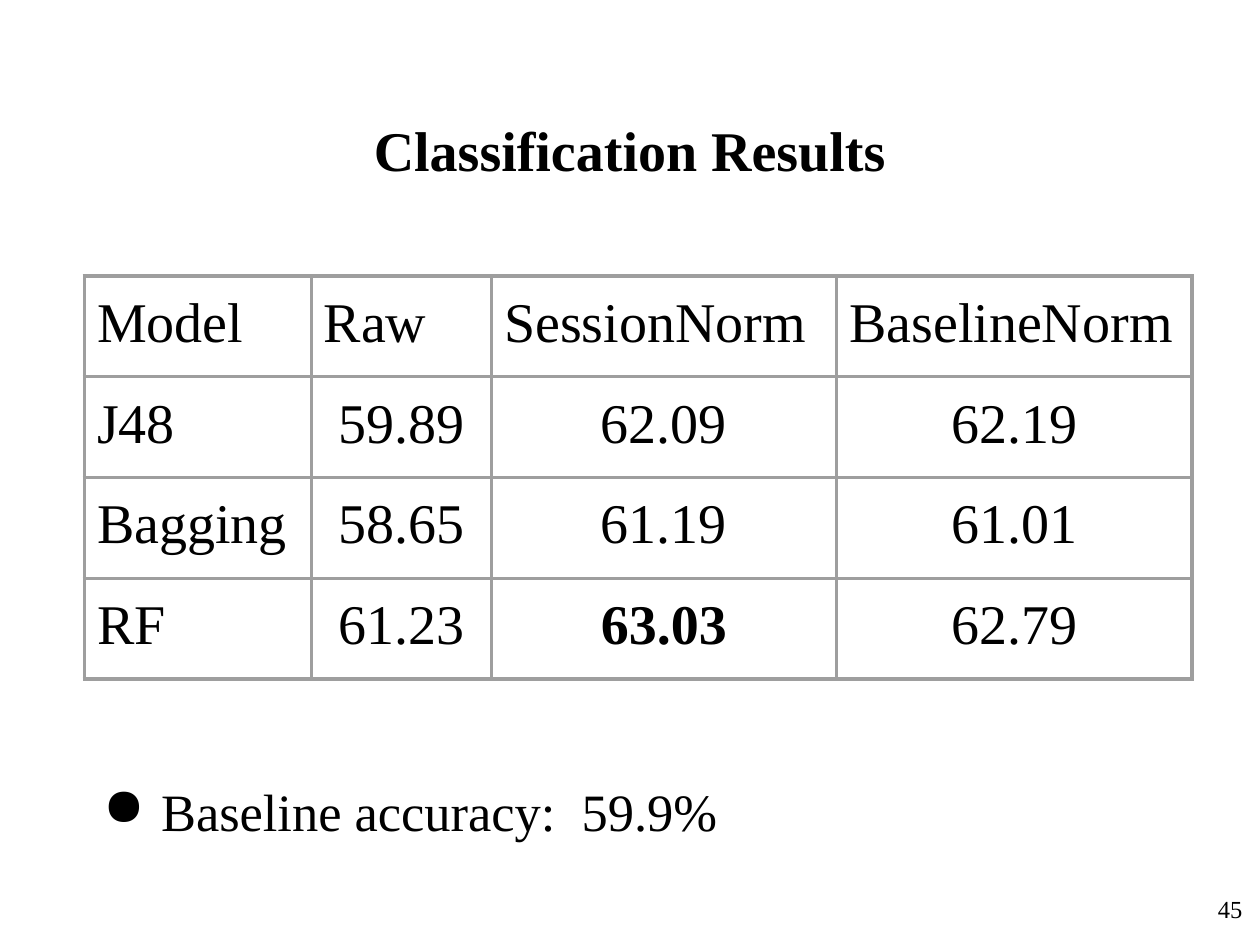
"""Build the classification results slide with its table and baseline note."""

from dataclasses import dataclass

from lxml import etree
from pptx import Presentation
from pptx.dml.color import RGBColor
from pptx.enum.text import MSO_ANCHOR, MSO_AUTO_SIZE, PP_ALIGN
from pptx.oxml.ns import qn
from pptx.util import Inches, Pt

LEFT, CENTER, RIGHT = PP_ALIGN.LEFT, PP_ALIGN.CENTER, PP_ALIGN.RIGHT
TOP, MIDDLE, BOTTOM = MSO_ANCHOR.TOP, MSO_ANCHOR.MIDDLE, MSO_ANCHOR.BOTTOM
NO_AUTOFIT = MSO_AUTO_SIZE.NONE

FONT_NAME = "Times New Roman"
TEXT_COLOR = "000000"
BORDER_COLOR = "9E9E9E"
BORDER_WIDTH = Pt(2.25)
BORDER_TAGS = ("a:lnL", "a:lnR", "a:lnT", "a:lnB")
MARGIN = 0.1
CELL_MARGIN = 0.13
TABLE_LEFT, TABLE_TOP = 0.67, 2.19
ROW_HEIGHT = 0.8
COLUMN_WIDTHS = (1.8, 1.43, 2.74, 2.82)
RESULTS = (
    ("Model", "Raw", "SessionNorm", "BaselineNorm"),
    ("J48", "59.89", "62.09", "62.19"),
    ("Bagging", "58.65", "61.19", "61.01"),
    ("RF", "61.23", "63.03", "62.79"),
)
BEST_RESULT = "63.03"


@dataclass(frozen=True)
class TextBlock:
    text: str
    left: float
    top: float
    width: float
    height: float
    size: float
    bold: bool = False
    alignment: PP_ALIGN = LEFT
    anchor: MSO_ANCHOR = TOP


TITLE = TextBlock("Classification Results", 0.5, 0.3, 9, 1.25, 32, True, CENTER, BOTTOM)
PAGE_NUMBER = TextBlock("45", 9.36, 6.93, 0.6, 0.57, 14, False, RIGHT, MIDDLE)
BASELINE_NOTE = TextBlock("Baseline accuracy:  59.9%", 0.68, 6.08, 6.59, 0.9, 30)


def color(value: str) -> RGBColor:
    return RGBColor.from_string(value)


def apply_format(target, values: dict) -> None:
    for name, value in values.items():
        setattr(target, name, value)


def write_text(paragraph, text: str, size: float, bold: bool, alignment: PP_ALIGN) -> None:
    paragraph.alignment = alignment
    run = paragraph.add_run()
    run.text = text
    apply_format(run.font, {"name": FONT_NAME, "size": Pt(size), "bold": bold})
    run.font.color.rgb = color(TEXT_COLOR)


def fill_text_block(shape, block: TextBlock) -> None:
    apply_format(shape, {
        name: Inches(getattr(block, name)) for name in ("left", "top", "width", "height")
    })
    frame = shape.text_frame
    apply_format(frame, {
        "word_wrap": True,
        "auto_size": NO_AUTOFIT,
        "vertical_anchor": block.anchor,
        "margin_left": Inches(MARGIN),
        "margin_right": Inches(MARGIN),
        "margin_top": Inches(MARGIN),
        "margin_bottom": Inches(MARGIN),
    })
    write_text(frame.paragraphs[0], block.text, block.size, block.bold, block.alignment)


def add_text_block(slide, block: TextBlock):
    shape = slide.shapes.add_textbox(0, 0, 0, 0)
    fill_text_block(shape, block)
    return shape


def add_bullet(paragraph, character: str, margin: float, indent: float) -> None:
    properties = paragraph._p.get_or_add_pPr()
    properties.set("marL", str(Inches(margin)))
    properties.set("indent", str(Inches(indent)))
    etree.SubElement(properties, qn("a:buChar"), char=character)


def add_cell_borders(cell) -> None:
    properties = cell._tc.get_or_add_tcPr()
    for position, tag in enumerate(BORDER_TAGS):
        line = etree.Element(qn(tag), w=str(BORDER_WIDTH))
        fill = etree.SubElement(line, qn("a:solidFill"))
        etree.SubElement(fill, qn("a:srgbClr"), val=BORDER_COLOR)
        properties.insert(position, line)


def add_results_table(slide) -> None:
    table = slide.shapes.add_table(
        len(RESULTS), len(COLUMN_WIDTHS), Inches(TABLE_LEFT), Inches(TABLE_TOP),
        Inches(sum(COLUMN_WIDTHS)), Inches(ROW_HEIGHT * len(RESULTS)),
    ).table
    apply_format(table, {"first_row": False, "horz_banding": False})
    for column, width in zip(table.columns, COLUMN_WIDTHS):
        column.width = Inches(width)
    for row_index, values in enumerate(RESULTS):
        table.rows[row_index].height = Inches(ROW_HEIGHT)
        for column_index, value in enumerate(values):
            cell = table.cell(row_index, column_index)
            apply_format(cell, {
                "margin_left": Inches(MARGIN),
                "margin_right": Inches(MARGIN),
                "margin_top": Inches(CELL_MARGIN),
                "margin_bottom": Inches(CELL_MARGIN),
                "vertical_anchor": TOP,
            })
            cell.fill.background()
            add_cell_borders(cell)
            alignment = CENTER if row_index and column_index else LEFT
            write_text(cell.text_frame.paragraphs[0], value, 32, value == BEST_RESULT, alignment)


def main() -> None:
    presentation = Presentation()
    apply_format(presentation, {"slide_width": Inches(10), "slide_height": Inches(7.5)})
    slide = presentation.slides.add_slide(presentation.slide_layouts.get_by_name("Title Only"))
    fill_text_block(slide.shapes.title, TITLE)
    add_text_block(slide, PAGE_NUMBER)
    add_results_table(slide)
    note = add_text_block(slide, BASELINE_NOTE)
    add_bullet(note.text_frame.paragraphs[0], "●", 0.5, -0.46)
    presentation.save("out.pptx")


if __name__ == "__main__":
    main()
